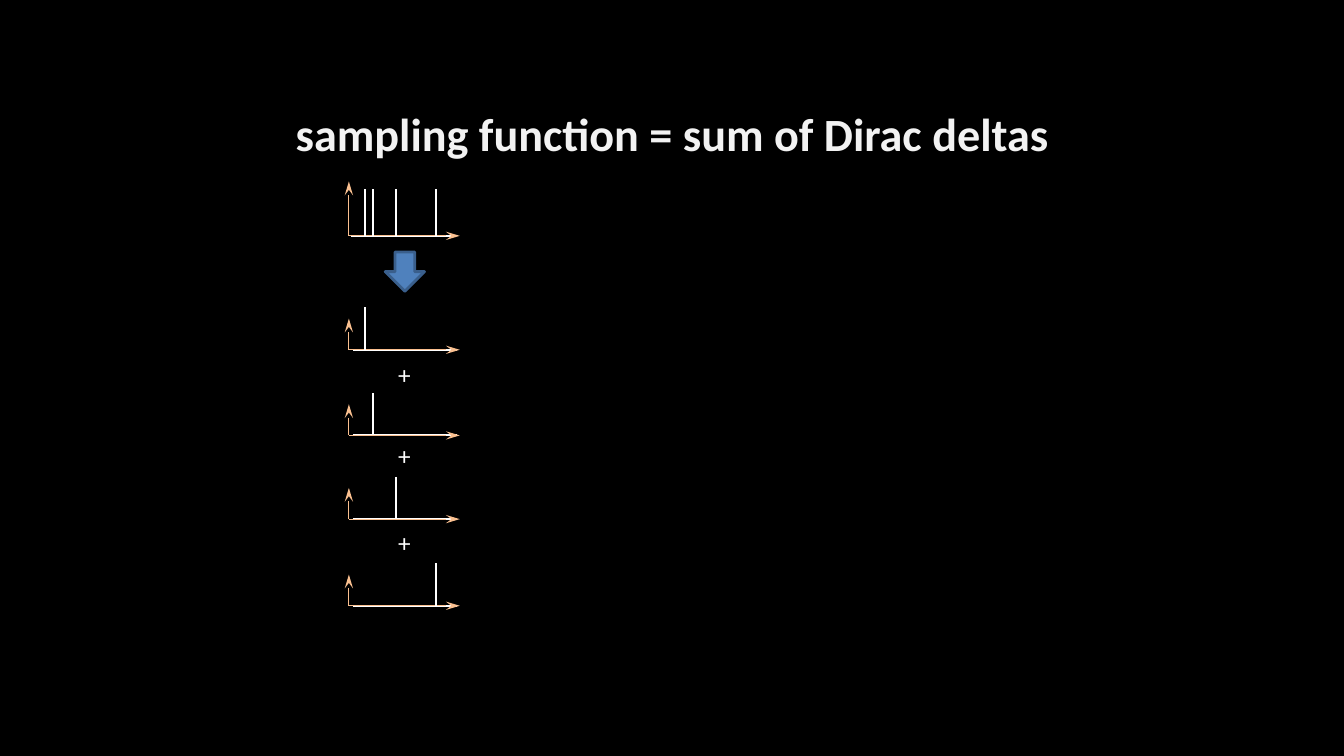
from lxml.etree import SubElement
from pptx import Presentation
from pptx.dml.color import RGBColor
from pptx.enum.shapes import MSO_CONNECTOR as Connector, MSO_SHAPE as Shape
from pptx.enum.text import MSO_ANCHOR as Anchor, MSO_AUTO_SIZE as AutoSize, PP_ALIGN as Align
from pptx.oxml.ns import qn
from pptx.util import Inches, Pt

WIDTH, HEIGHT = Inches(13.33), Inches(7.5)
AXIS_LEFT, AXIS_LENGTH = 25.96, 8.25
BASELINE_LENGTH = 7.72
DELTAS = [27.16, 27.76, 29.48, 32.41]
TERM_BOTTOMS = [46.27, 57.6, 68.67, 80.13]
PLUS_TOPS = [46.93, 57.6, 69.07]
AXIS_COLOR, SIGNAL_COLOR = "FAC090", "FFFFFF"


def x(percent):
    """Turn a percentage of the slide width into a length."""
    return round(WIDTH * percent / 100)


def y(percent):
    """Turn a percentage of the slide height into a length."""
    return round(HEIGHT * percent / 100)


def color(value):
    """Return the colour of a hex string."""
    return RGBColor.from_string(value)


def add_line(shapes, start, end, line_color, width, arrow=False):
    """Draw a straight line, with an arrowhead at its end if asked."""
    line = shapes.add_connector(
        Connector.STRAIGHT, x(start[0]), y(start[1]), x(end[0]), y(end[1]))
    line.line.color.rgb = color(line_color)
    line.line.width = Pt(width)
    if arrow:
        SubElement(line.line._get_or_add_ln(), qn("a:tailEnd"),
                   type="stealth", w="med", len="lg")
    SubElement(line._element.spPr, qn("a:effectLst"))


def add_plot(slide, bottom, deltas, axis_height, delta_height, baseline_offset):
    """Draw a grouped pair of axes with a baseline and Dirac deltas."""
    shapes = slide.shapes.add_group_shape().shapes
    origin = (AXIS_LEFT, bottom)
    baseline_left = AXIS_LEFT + baseline_offset
    add_line(shapes, origin, (AXIS_LEFT, bottom - axis_height), AXIS_COLOR, 0.75, True)
    add_line(shapes, (baseline_left, bottom),
             (baseline_left + BASELINE_LENGTH, bottom), SIGNAL_COLOR, 1.5)
    add_line(shapes, origin, (AXIS_LEFT + AXIS_LENGTH, bottom), AXIS_COLOR, 0.75, True)
    for delta in deltas:
        add_line(shapes, (delta, bottom - delta_height), (delta, bottom), SIGNAL_COLOR, 1.5)


def add_text(slide, box, text, size, text_color, bold=False, wrap=False):
    """Add a text box with one formatted paragraph."""
    left, top, width, height = box
    frame = slide.shapes.add_textbox(x(left), y(top), x(width), y(height)).text_frame
    frame.text = text
    frame.word_wrap = wrap
    frame.auto_size = AutoSize.NONE if wrap else AutoSize.SHAPE_TO_FIT_TEXT
    frame.vertical_anchor = Anchor.MIDDLE if wrap else Anchor.TOP
    paragraph = frame.paragraphs[0]
    paragraph.alignment = Align.CENTER if wrap else Align.LEFT
    font = paragraph.runs[0].font
    font.name, font.size, font.bold = "Calibri", Pt(size), bold
    font.color.rgb = color(text_color)


def add_down_arrow(slide):
    """Add the block arrow from the sum to its terms."""
    arrow = slide.shapes.add_shape(
        Shape.DOWN_ARROW, x(28.66), y(33.33), x(2.93), y(5.2))
    arrow.shadow.inherit = False
    arrow.fill.solid()
    arrow.fill.fore_color.rgb = color("4F81BD")
    arrow.line.color.rgb = color("3A5F8C")
    arrow.line.width = Pt(2)


def main():
    """Build the slide and save it."""
    presentation = Presentation()
    presentation.slide_width, presentation.slide_height = WIDTH, HEIGHT
    slide = presentation.slides.add_slide(presentation.slide_layouts[6])
    slide.background.fill.solid()
    slide.background.fill.fore_color.rgb = color("000000")

    add_text(slide, (16.65, 13.07, 66.77, 9.07),
             "sampling function = sum of Dirac deltas", 33, "F2F2F2", bold=True, wrap=True)
    add_down_arrow(slide)
    add_plot(slide, 31.2, DELTAS, 7.2, 6.13, 0.15)
    for bottom, delta in zip(TERM_BOTTOMS, DELTAS):
        add_plot(slide, bottom, [delta], 4.13, 5.6, 0.3)
    for top in PLUS_TOPS:
        add_text(slide, (28.88, top, 2.48, 5.33), "+", 18, SIGNAL_COLOR)

    presentation.save("out.pptx")


if __name__ == "__main__":
    main()
